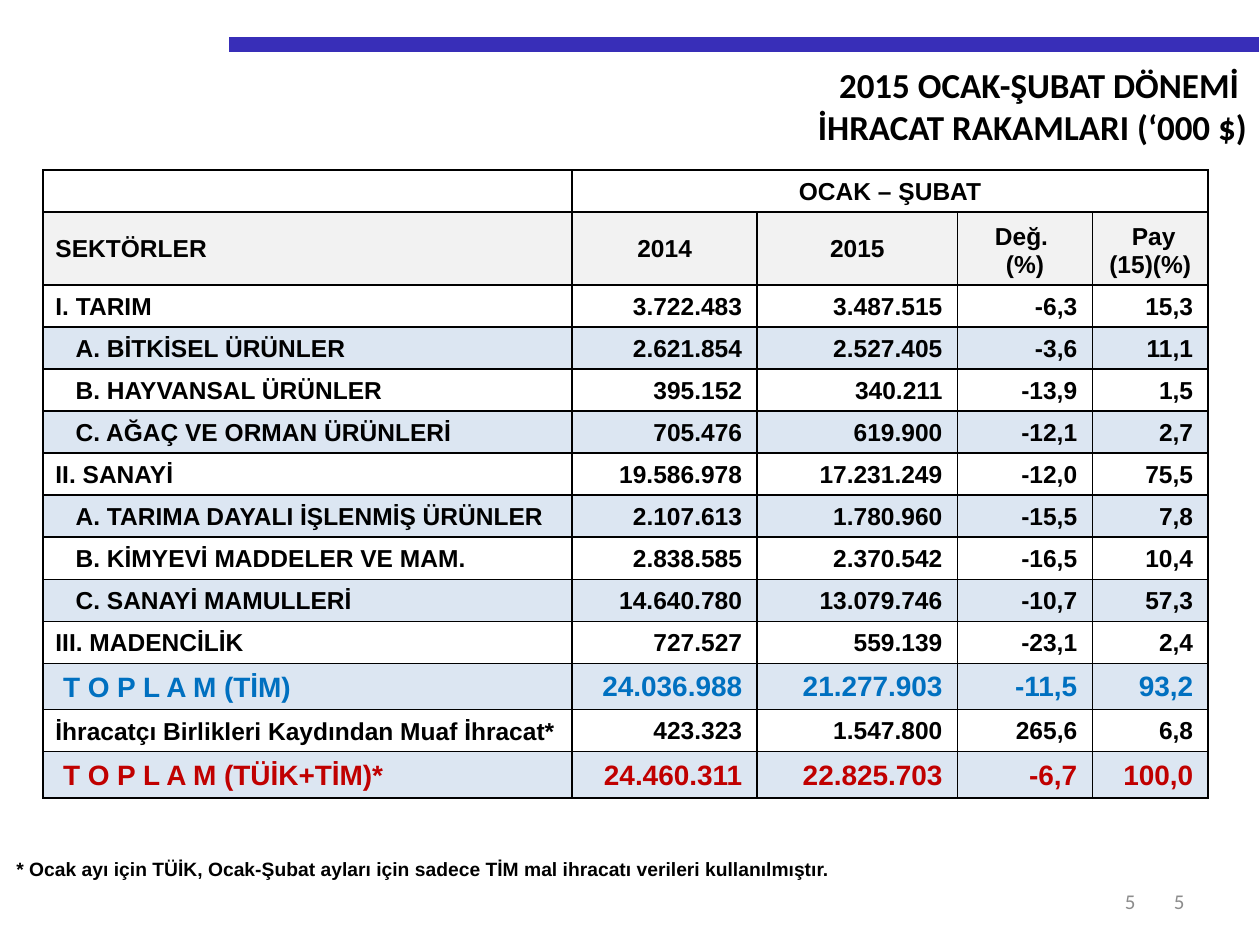
from lxml import etree
from pptx import Presentation
from pptx import util as u
from pptx.dml.color import RGBColor
from pptx.enum import shapes, text
from pptx.oxml import ns

COLORS = {"ink": "000000", "bar": "382EB8", "page": "8C8C8C", "header": "F2F2F2",
          "band": "DCE6F2", "tim": "0070C0", "general": "C00000"}
LEFT, CENTER, RIGHT = text.PP_ALIGN.LEFT, text.PP_ALIGN.CENTER, text.PP_ALIGN.RIGHT
TOP, MIDDLE, BOTTOM = (text.MSO_ANCHOR.TOP, text.MSO_ANCHOR.MIDDLE,
                       text.MSO_ANCHOR.BOTTOM)
NUMBER_INSETS = (0.01, 0.01, 0.12, 0)
NOTE_INSETS = (0.01, 0.01, 0.01, 0)

# label, figures (2014, 2015, change, share), indent in inches, size, colour
SECTORS = [
    ("I. TARIM", "3.722.483 3.487.515 -6,3 15,3", 0, 14, "ink"),
    ("A. BİTKİSEL ÜRÜNLER", "2.621.854 2.527.405 -3,6 11,1", 0.16, 14, "ink"),
    ("B. HAYVANSAL ÜRÜNLER", "395.152 340.211 -13,9 1,5", 0.16, 14, "ink"),
    ("C. AĞAÇ VE ORMAN ÜRÜNLERİ", "705.476 619.900 -12,1 2,7", 0.16, 14, "ink"),
    ("II. SANAYİ", "19.586.978 17.231.249 -12,0 75,5", 0, 14, "ink"),
    ("A. TARIMA DAYALI İŞLENMİŞ ÜRÜNLER", "2.107.613 1.780.960 -15,5 7,8",
     0.16, 14, "ink"),
    ("B. KİMYEVİ MADDELER VE MAM.", "2.838.585 2.370.542 -16,5 10,4", 0.16, 14, "ink"),
    ("C. SANAYİ MAMULLERİ", "14.640.780 13.079.746 -10,7 57,3", 0.16, 14, "ink"),
    ("III. MADENCİLİK", "727.527 559.139 -23,1 2,4", 0, 14, "ink"),
    ("T O P L A M (TİM)", "24.036.988 21.277.903 -11,5 93,2", 0.06, 16, "tim"),
    ("İhracatçı Birlikleri Kaydından Muaf İhracat*", "423.323 1.547.800 265,6 6,8",
     0, 14, "ink"),
    ("T O P L A M (TÜİK+TİM)*", "24.460.311 22.825.703 -6,7 100,0",
     0.06, 16, "general"),
]


class Deck:
    """Holds the style and the current slide; lengths are in cells of a 100 x 75 grid."""

    def __init__(self):
        self.show = Presentation()
        self.show.slide_width, self.show.slide_height = u.Inches(10), u.Inches(7.5)
        self.cell_size = self.show.slide_width // 100
        self.slide = self.show.slides.add_slide(self.show.slide_layouts[5])

    def grid(self, *lengths):
        return [round(length * self.cell_size) for length in lengths]

    def set_text(self, frame, lines, size, color="ink", font="Arial", bold=True,
                 align=LEFT):
        frame.text = lines
        for paragraph in frame.paragraphs:
            paragraph.alignment = align
            style = paragraph.font
            style.name, style.size, style.bold = font, u.Pt(size), bold
            style.color.rgb = RGBColor.from_string(COLORS[color])
            if not paragraph.runs:
                end = etree.SubElement(paragraph._p, ns.qn("a:endParaRPr"))
                end.set("sz", str(size * 100))

    def bar(self, x1, x2, y, points):
        line = self.slide.shapes.add_connector(
            shapes.MSO_CONNECTOR.STRAIGHT, *self.grid(x1, y, x2, y))
        line.line.width = u.Pt(points)
        line.line.color.rgb = RGBColor.from_string(COLORS["bar"])
        etree.SubElement(line._element.spPr, ns.qn("a:effectLst"))

    def title(self, box, lines):
        title = self.slide.shapes.title
        title.left, title.top, title.width, title.height = self.grid(*box)
        title.text_frame.vertical_anchor = TOP
        title.text_frame.auto_size = text.MSO_AUTO_SIZE.SHAPE_TO_FIT_TEXT
        self.set_text(title.text_frame, lines, 20, font="Calibri", align=RIGHT)

    def page_number(self, box, number):
        frame = self.slide.shapes.add_textbox(*self.grid(*box)).text_frame
        frame.word_wrap = True
        frame.vertical_anchor = MIDDLE
        self.set_text(frame, number, 12, "page", "Calibri", False, RIGHT)

    def table(self, box, columns, rows):
        """Share out the box among columns and rows by their weights."""
        box = self.grid(*box)
        table = self.slide.shapes.add_table(len(rows), len(columns), *box).table
        table.first_row = table.horz_banding = False
        for column, weight in zip(table.columns, columns):
            column.width = round(box[2] * weight / sum(columns))
        for row, weight in zip(table.rows, rows):
            row.height = round(box[3] * weight / sum(rows))
        return table

    def fill_cell(self, cell, lines, size=14, color="ink", align=LEFT, anchor=BOTTOM,
                  fill=None, insets=None, indent=0, border=True):
        self.set_text(cell.text_frame, lines, size, color, align=align)
        cell.vertical_anchor = anchor
        insets = insets or (0.1 + indent, 0.05, 0.1, 0.05)
        (cell.margin_left, cell.margin_top,
         cell.margin_right, cell.margin_bottom) = map(u.Inches, insets)
        if border:
            self.border(cell)
        if fill:
            cell.fill.solid()
            cell.fill.fore_color.rgb = RGBColor.from_string(COLORS[fill])
        else:
            cell.fill.background()

    def border(self, cell):
        properties = cell._tc.get_or_add_tcPr()
        for side in "LRTB":
            edge = etree.SubElement(properties, ns.qn(f"a:ln{side}"), w=str(u.Pt(1)))
            solid = etree.SubElement(edge, ns.qn("a:solidFill"))
            etree.SubElement(solid, ns.qn("a:srgbClr"), val=COLORS["ink"])


def export_table(deck):
    weights = [0.3, 0.52] + [0.33 if size == 16 else 0.3 for *_, size, _ in SECTORS]
    table = deck.table((3.4, 13.5, 92.5, 49.7), [4.2, 1.47, 1.59, 1.07, 0.92], weights)
    table.cell(0, 1).merge(table.cell(0, 4))
    for column, heading in enumerate(["", "OCAK – ŞUBAT", "", "", ""]):
        deck.fill_cell(table.cell(0, column), heading, align=CENTER)
    headings = ["SEKTÖRLER", "2014", "2015", "Değ. \n(%)", " Pay\n(15)(%)"]
    for column, heading in enumerate(headings):
        deck.fill_cell(table.cell(1, column), heading, fill="header",
                       align=CENTER if column else LEFT,
                       anchor=BOTTOM if "\n" in heading else MIDDLE)
    for index, (label, figures, indent, size, color) in enumerate(SECTORS):
        row, fill = index + 2, "band" if index % 2 else None
        deck.fill_cell(table.cell(row, 0), label, size, color, fill=fill, indent=indent)
        for column, figure in enumerate(figures.split(), 1):
            deck.fill_cell(table.cell(row, column), figure, size, color, RIGHT, MIDDLE,
                           fill, NUMBER_INSETS)


def main():
    deck = Deck()
    deck.bar(18.2, 99.9, 3.5, 8.5)
    deck.title((10.6, 4.5, 89.4, 7.7),
               "2015 OCAK-ŞUBAT DÖNEMİ \nİHRACAT RAKAMLARI (‘000 $)")
    export_table(deck)
    footnote = deck.table((1.2, 67.4, 74, 3.1), [1], [1])
    deck.fill_cell(
        footnote.cell(0, 0),
        "* Ocak ayı için TÜİK, Ocak-Şubat ayları için sadece TİM mal ihracatı "
        "verileri kullanılmıştır.",
        11, anchor=MIDDLE, insets=NOTE_INSETS, border=False)
    for left, width in [(71.7, 23.3), (70.1, 21)]:
        deck.page_number((left, 69.5, width, 4), "5")
    deck.show.save("out.pptx")


if __name__ == "__main__":
    main()
